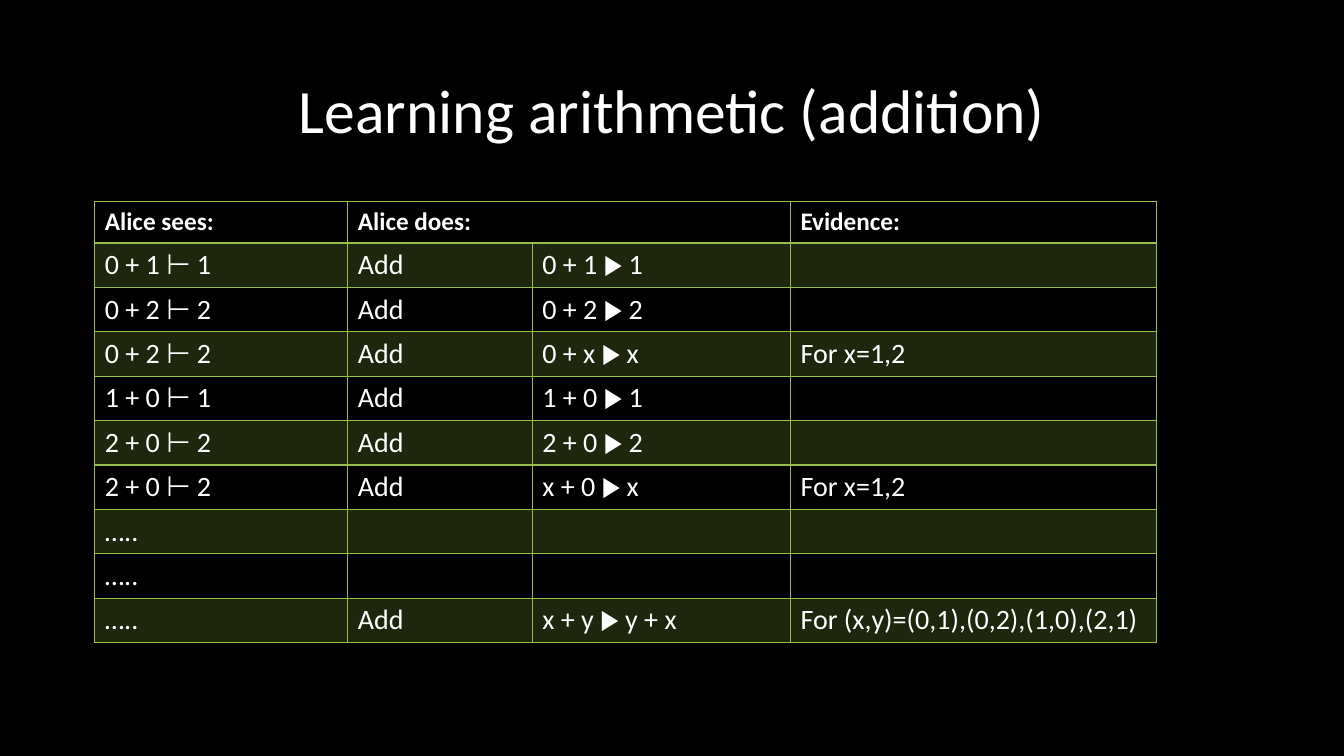
from lxml import etree
from pptx import Presentation
from pptx.dml.color import RGBColor
from pptx.enum.text import MSO_ANCHOR, PP_ALIGN
from pptx.oxml.ns import qn
from pptx.util import Inches, Pt

CENTER = PP_ALIGN.CENTER
MIDDLE = MSO_ANCHOR.MIDDLE
FONT = "Calibri"
COLORS = {"background": "000000", "text": "FFFFFF", "green": "97BE49"}
COLUMN_WIDTHS = [2.51, 1.83, 2.56, 3.63]
HEADER_HEIGHT = 0.41
ROW_HEIGHT = 0.44
BAND_OPACITY = 20
ROWS = [
    ["Alice sees:", "Alice does:", "", "Evidence:"],
    ["0 + 1 ⊢ 1", "Add", "0 + 1 ▶ 1", ""],
    ["0 + 2 ⊢ 2", "Add", "0 + 2 ▶ 2", ""],
    ["0 + 2 ⊢ 2", "Add", "0 + x ▶ x", "For x=1,2"],
    ["1 + 0 ⊢ 1", "Add", "1 + 0 ▶ 1", ""],
    ["2 + 0 ⊢ 2", "Add", "2 + 0 ▶ 2", ""],
    ["2 + 0 ⊢ 2", "Add", "x + 0 ▶ x", "For x=1,2"],
    ["…..", "", "", ""],
    ["…..", "", "", ""],
    ["…..", "Add", "x + y ▶ y + x", "For (x,y)=(0,1),(0,2),(1,0),(2,1)"],
]


def color(name):
    """Return the named colour."""
    return RGBColor.from_string(COLORS[name])


def format_paragraph(paragraph, size, bold=False):
    """Set the font of a paragraph."""
    font = paragraph.font
    font.name = FONT
    font.size = Pt(size)
    font.bold = bold
    font.color.rgb = color("text")


def add_title(slide, text):
    """Fill and place the title placeholder."""
    title = slide.shapes.title
    title.left, title.top = Inches(0.92), Inches(0.4)
    title.width, title.height = Inches(11.5), Inches(1.45)
    title.text_frame.text = text
    title.text_frame.vertical_anchor = MIDDLE
    paragraph = title.text_frame.paragraphs[0]
    paragraph.alignment = CENTER
    paragraph.line_spacing = 0.9
    format_paragraph(paragraph, 44)


def set_borders(cell, bottom_width):
    """Draw green lines on the four sides of a cell."""
    properties = cell._tc.get_or_add_tcPr()
    widths = {"a:lnL": 1, "a:lnR": 1, "a:lnT": 1, "a:lnB": bottom_width}
    for tag, width in widths.items():
        line = etree.SubElement(properties, qn(tag), w=str(Pt(width)))
        fill = etree.SubElement(line, qn("a:solidFill"))
        etree.SubElement(fill, qn("a:srgbClr"), val=COLORS["green"])


def set_fill(cell, banded):
    """Give a cell a translucent green band or no fill."""
    if not banded:
        cell.fill.background()
        return
    cell.fill.solid()
    cell.fill.fore_color.rgb = color("green")
    fill_color = cell._tc.tcPr.find(qn("a:solidFill")).find(qn("a:srgbClr"))
    etree.SubElement(fill_color, qn("a:alpha"), val=str(BAND_OPACITY * 1000))


def add_addition_table(slide):
    """Add the table of what Alice sees and does."""
    height = HEADER_HEIGHT + ROW_HEIGHT * (len(ROWS) - 1)
    table = slide.shapes.add_table(
        len(ROWS), len(COLUMN_WIDTHS), Inches(0.94), Inches(2),
        Inches(sum(COLUMN_WIDTHS)), Inches(height),
    ).table
    table.first_row = False
    table.horz_banding = False
    for column, width in zip(table.columns, COLUMN_WIDTHS):
        column.width = Inches(width)
    for row_index, texts in enumerate(ROWS):
        header = row_index == 0
        row = table.rows[row_index]
        row.height = Inches(HEADER_HEIGHT if header else ROW_HEIGHT)
        for cell, text in zip(row.cells, texts):
            cell.text = text
            format_paragraph(cell.text_frame.paragraphs[0], 18 if header else 20, header)
            set_borders(cell, 2 if header else 1)
            set_fill(cell, row_index % 2 == 1)
    table.cell(0, 1).merge(table.cell(0, 2))


def main():
    """Build the slide and save it."""
    presentation = Presentation()
    presentation.slide_width = Inches(13.33)
    presentation.slide_height = Inches(7.5)
    slide = presentation.slides.add_slide(presentation.slide_layouts[5])
    slide.background.fill.solid()
    slide.background.fill.fore_color.rgb = color("background")
    add_title(slide, "Learning arithmetic (addition)")
    add_addition_table(slide)
    presentation.save("out.pptx")


if __name__ == "__main__":
    main()
